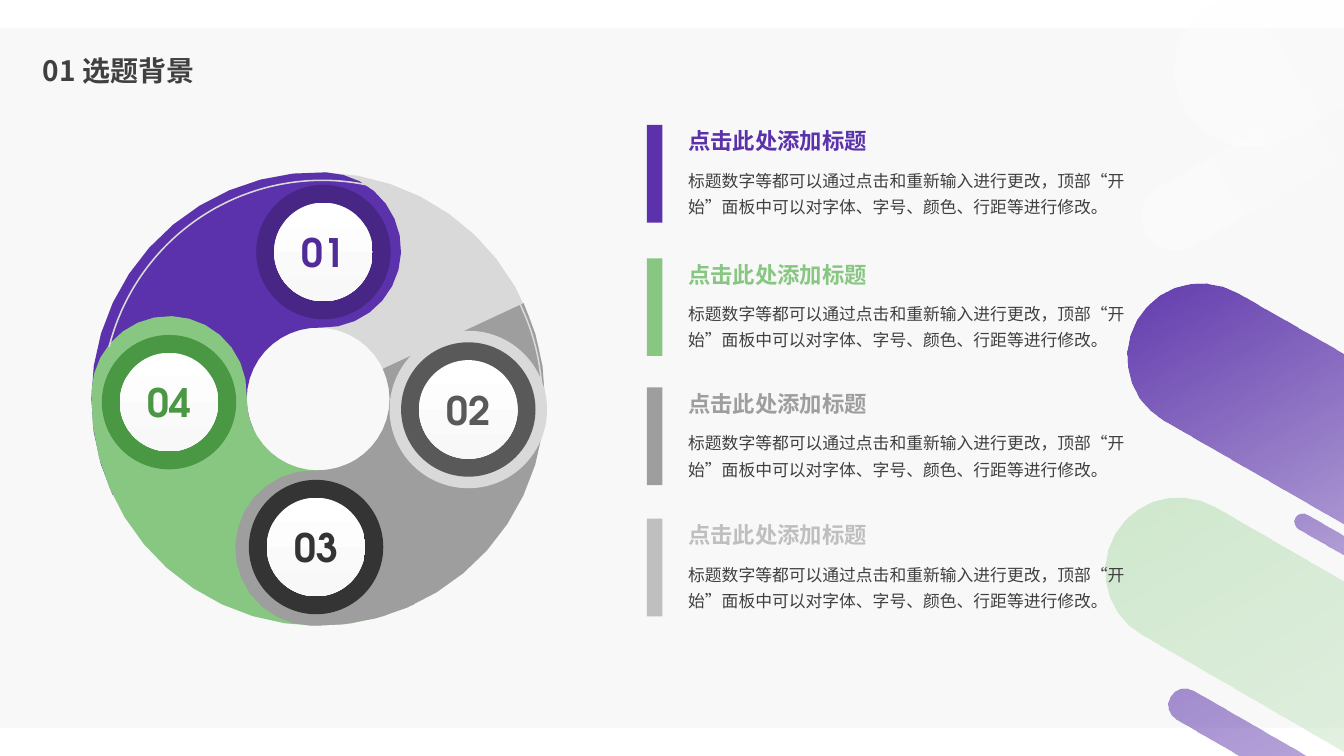
from math import cos, radians, sin, tan

from lxml import etree
from pptx import Presentation
from pptx.dml.color import RGBColor
from pptx.enum.shapes import MSO_SHAPE
from pptx.enum.text import MSO_ANCHOR, PP_ALIGN
from pptx.oxml.ns import qn
from pptx.util import Pt

PX = 9525
WIDE, HIGH = 1280, 720
FINE = 100
RECT, OVAL, ARC = MSO_SHAPE.RECTANGLE, MSO_SHAPE.OVAL, MSO_SHAPE.BLOCK_ARC
MIDDLE = MSO_ANCHOR.MIDDLE
LEFT, CENTER = PP_ALIGN.LEFT, PP_ALIGN.CENTER
SANS, ROUND = "Noto Sans CJK SC", "TeX Gyre Adventor"
INK = "404040"
HEAD = "点击此处添加标题"
BODY = ("标题数字等都可以通过点击和重新输入进行更改，顶部“开始”面板中"
        "可以对字体、字号、颜色、行距等进行修改。")

HUB = (303, 380)
OUTER, INNER = 216, 68
SWEEP = 117

# cap x, cap y, radius, slope, colour, first and last opacity
PILLS = [
    (1144, 340, 70, 30, "5B32AB", 95, 50),
    (1191, 67, 73, -30, "FFFFFF", 50, 20),
    (1119, 207, 32, -30, "FFFFFF", 50, 10),
    (1123, 544, 70, 30, "D0E9CE", 100, 60),
    (1241, 497, 8, 30, "5B32AB", 55, 45),
    (1129, 672, 16, 30, "5B32AB", 55, 40),
]
CARDS = [(119, "5B32AB"), (246, "87C782"), (369, "9E9E9E"), (494, "BFBFBF")]


def rgb(code):
    return RGBColor.from_string(code)


def box(*sizes):
    return [n * PX for n in sizes]


def paint(shape, code):
    shape.shadow.inherit = False
    shape.line.fill.background()
    shape.fill.solid()
    shape.fill.fore_color.rgb = rgb(code)
    return shape


def blend(shape, stops, angle):
    """Fill with (colour, opacity) stops, angle clockwise from rightwards."""
    fill = shape.fill
    fill.gradient()
    fill.gradient_angle = 360 - angle
    for stop, (code, alpha) in zip(fill.gradient_stops, stops):
        stop.color.rgb = rgb(code)
    for tag, (code, alpha) in zip(shape._element.iter(qn("a:srgbClr")), stops):
        etree.SubElement(tag, qn("a:alpha"), val=str(alpha * 1000))


def block(slide, kind, x, y, w, h, code):
    return paint(slide.shapes.add_shape(kind, *box(x, y, w, h)), code)


def disc(slide, x, y, r, code):
    return block(slide, OVAL, x - r, y - r, 2 * r, 2 * r, code)


def write(frame, text, size, code, font, bold=False, align=LEFT, space=None):
    frame.text = text
    para = frame.paragraphs[0]
    para.alignment = align
    para.line_spacing = space
    run = para.runs[0]
    run.font.size, run.font.bold = Pt(size), bold
    run.font.name, run.font.color.rgb = font, rgb(code)
    east = etree.SubElement(run._r.get_or_add_rPr(), qn("a:ea"))
    east.set("typeface", SANS)


def arc(x, y, r, start, end):
    """List points on an arc, with fewer of them on a small one."""
    steps = 14 if r > 40 else 8
    angles = [radians(start + (end - start) * i / steps)
              for i in range(steps + 1)]
    return [(x + r * cos(a), y + r * sin(a)) for a in angles]


def outline(slide, points, code):
    points = [(x * FINE, y * FINE) for x, y in points]
    pen = slide.shapes.build_freeform(*points[0], scale=PX / FINE)
    pen.add_line_segments(points[1:], close=True)
    return paint(pen.convert_to_shape(), code)


def pill(slide, x, y, r, slope, code, first, last):
    """Draw a band with a round left cap, running to the right edge."""
    cap = arc(x, y, r, slope + 90, slope + 270)
    ends = [(WIDE, py + (WIDE - px) * tan(radians(slope)))
            for px, py in (cap[-1], cap[0])]
    shape = outline(slide, cap + ends, code)
    blend(shape, [(code, first), (code, last)], 60 if slope > 0 else 330)


def comma(slide, turn, code):
    """Draw a ring part whose round head lies at the angle turn."""
    mid, r = (OUTER + INNER) / 2, (OUTER - INNER) / 2
    x = HUB[0] + mid * cos(radians(turn))
    y = HUB[1] + mid * sin(radians(turn))
    tail = turn - SWEEP
    outline(slide, arc(*HUB, OUTER, tail, turn)
            + arc(x, y, r, turn, turn + 180)
            + arc(*HUB, INNER, turn, tail), code)


def badge(slide, x, y, label, rim, ink):
    disc(slide, x, y, 64, rim)
    face = disc(slide, x, y, 47, "FFFFFF")
    blend(face, [("FFFFFF", 100), ("F8F8F8", 100)], 90)
    frame = face.text_frame
    frame.vertical_anchor = MIDDLE
    frame.word_wrap = False
    write(frame, label, 28, ink, ROUND, True, CENTER)


def card(slide, top, code):
    add = slide.shapes.add_textbox
    body = add(*box(646, top + 33, 441, 60)).text_frame
    body.word_wrap = True
    write(body, BODY, 12, INK, SANS, space=1.3)
    head = add(*box(646, top - 10, 192, 43)).text_frame
    head.word_wrap = False
    write(head, HEAD, 16, code, ROUND, True, space=1.3)
    block(slide, RECT, 616, top, 15, 93, code)


def title(slide, text):
    shape = slide.shapes.title
    shape.left, shape.top, shape.width, shape.height = box(31, 41, 479, 56)
    shape.text_frame.vertical_anchor = MIDDLE
    write(shape.text_frame, text, 20, INK, SANS, True, space=0.9)
    slide.shapes._spTree.append(shape._element)


def ring(slide):
    comma(slide, -13, "D9D9D9")
    comma(slide, -88, "5B32AB")
    badge(slide, 308, 240, "01", "472686", "512C98")
    comma(slide, 182, "87C782")
    badge(slide, 161, 383, "04", "4A9744", "4A9744")
    comma(slide, 92, "9E9E9E")
    badge(slide, 301, 521, "03", "343434", "343434")
    rim = block(slide, ARC, 97, 171, 420, 420, "D9D9D9")
    for i, value in enumerate((116.42, 3.68, 0.0035)):
        rim.adjustments[i] = value
    disc(slide, 446, 390, 75, "D9D9D9")
    badge(slide, 446, 390, "02", "595959", "595959")


def main():
    deck = Presentation()
    deck.slide_width, deck.slide_height = box(WIDE, HIGH)
    slide = deck.slides.add_slide(deck.slide_layouts[5])
    block(slide, RECT, 0, 27, WIDE, 666, "F8F8F8")
    for row in PILLS:
        pill(slide, *row)
    title(slide, "01 选题背景")
    ring(slide)
    for top, code in CARDS:
        card(slide, top, code)
    deck.save("out.pptx")


if __name__ == "__main__":
    main()
